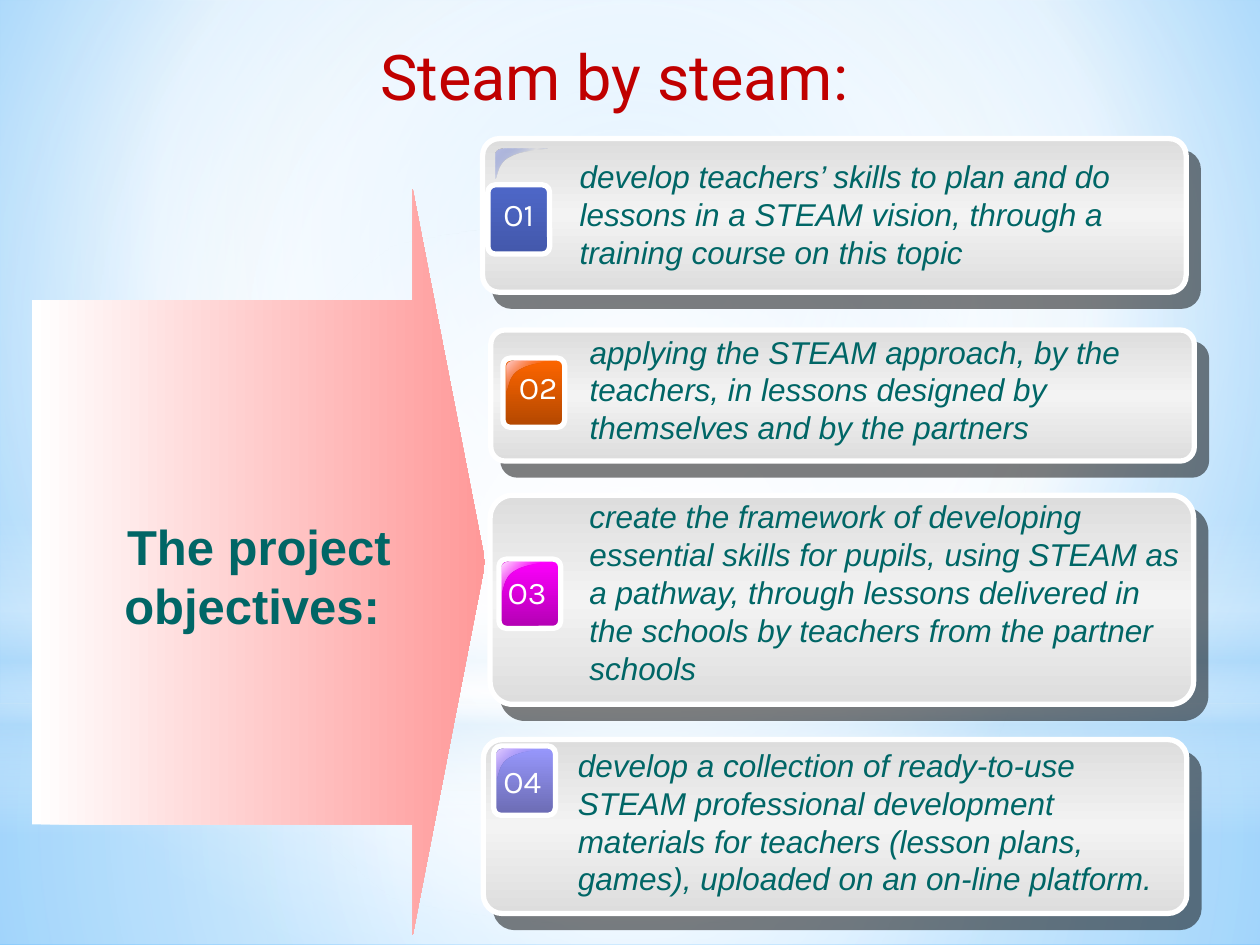
import lxml.etree
import pptx
import pptx.dml.color
import pptx.enum.shapes
import pptx.enum.text
import pptx.oxml.ns
import pptx.util

Pt = pptx.util.Pt
qn = pptx.oxml.ns.qn
SHAPES = pptx.enum.shapes.MSO_SHAPE
ALIGN = pptx.enum.text.PP_ALIGN

COLOURS = {
    "white": "FFFFFF", "haze": "B4DCFA", "sky": "9ED5FF", "deep sky": "5BB9FF",
    "text": "006666", "title": "C00000", "arrow": "FF9999", "shadow": "000000",
    "card edge": "DDDDDD", "card middle": "F3F3F3",
    "blue": "4E67C8", "dark blue": "4358AB", "pale blue": "BBC0E3",
    "orange": "FF6600", "dark orange": "B24700", "pale red": "FFD0D0",
    "magenta": "FF00FF", "dark magenta": "B200B2", "pale pink": "FFE5FF", "pink": "FFCCFF",
    "violet": "9999FF", "dark violet": "6B6BB2", "pale violet": "E5D0FF", "lilac": "CC99FF",
}
WIDTH, HEIGHT = 720, 540
CARD_WIDTH, TILE_SIZE, LABEL_SIZE = 402, (35.3, 39.6), (38.2, 28.8)
CENTRE = (50, 50, 50, 50)

# Background layers: shape, box, gradient stops (position, colour, opacity), direction
BACKDROP = [
    (SHAPES.RECTANGLE, (0, 402, WIDTH, 138),
     [(0, "white", 91), (37, "white", 76), (100, "haze", 79)], CENTRE),
    (SHAPES.RECTANGLE, (0, 0, WIDTH, 402),
     [(0, "white", 89), (48, "white", 62), (100, "haze", 79)], CENTRE),
    (SHAPES.RECTANGLE, (0, 296.6, WIDTH, 180),
     [(0, "white", 0), (29, "white", 30), (45, "haze", 40), (55, "white", 26),
      (65, "haze", 60), (100, "white", 0)], 90),
    (SHAPES.OVAL, (0, 126, WIDTH, 402), [(0, "white", 100), (56, "white", 0)], CENTRE),
]

OBJECTIVES = [
    {"label": "O1", "card": (275.8, 79.2, 87.8), "tile": (278.8, 105.6), "gloss": (283.4, 85),
     "label at": (280.6, 108), "text box": (331.2, 89.8, 347.8, 65.5),
     "tile colours": ("blue", "dark blue"), "gloss colours": ("pale blue", "blue"),
     "text": "develop teachers’ skills to plan and do lessons in a STEAM vision, "
             "through a training course on this topic"},
    {"label": "O2", "card": (280.5, 188.6, 74.9), "tile": (287.4, 204.6), "gloss": (289.4, 205.9),
     "label at": (289.4, 206.6), "text box": (337, 190, 342.7, 65.5),
     "tile colours": ("orange", "dark orange"), "gloss colours": ("pale red", "arrow"),
     "text": "applying the STEAM approach, by the teachers, in lessons designed by "
             "themselves and by the partners"},
    {"label": "O3", "card": (280.1, 283, 119.5), "tile": (285.1, 319.5), "gloss": (286.6, 321.1),
     "label at": (283, 324.2), "text box": (336.8, 284.2, 342.7, 108.7),
     "tile colours": ("magenta", "dark magenta"), "gloss colours": ("pale pink", "pink"),
     "text": "create the framework of developing essential skills for pupils, using STEAM "
             "as a pathway, through lessons delivered in the schools by teachers from the "
             "partner schools"},
    {"label": "O4", "card": (276.2, 422.6, 99.4), "tile": (282.1, 426.3), "gloss": (283.7, 427.7),
     "label at": (280.6, 432), "text box": (330.2, 426.3, 347.8, 87.1),
     "tile colours": ("violet", "dark violet"), "gloss colours": ("pale violet", "lilac"),
     "text": "develop a collection of ready-to-use STEAM professional development materials "
             "for teachers (lesson plans, games), uploaded on an on-line platform."},
]

# Corner highlight: one point makes a line, three make a cubic curve
GLOSS_START = (5.8, 0)
GLOSS_SEGMENTS = [
    [(2.2, 0), (0, 1.4), (0, 3.6)],
    [(0, 17.3)],
    [(1.4, 17.3), (0.7, 8.6), (7.9, 5)],
    [(15.1, 0.7), (29.5, 0.7), (29.2, 0)],
    [GLOSS_START],
]


def rgb(name):
    return pptx.dml.color.RGBColor.from_string(COLOURS[name])


def set_gradient(fill, element, stops, direction):
    """A number as direction is a linear angle, a tuple is the focus of a circle."""
    fill.gradient()
    gradient = element.find(".//" + qn("a:gradFill"))
    for child in list(gradient):
        gradient.remove(child)
    stop_list = lxml.etree.SubElement(gradient, qn("a:gsLst"))
    for position, name, opacity in stops:
        stop = lxml.etree.SubElement(stop_list, qn("a:gs"), pos=str(position * 1000))
        colour = lxml.etree.SubElement(stop, qn("a:srgbClr"), val=COLOURS[name])
        if opacity < 100:
            lxml.etree.SubElement(colour, qn("a:alpha"), val=str(opacity * 1000))
    if isinstance(direction, tuple):
        focus = lxml.etree.SubElement(gradient, qn("a:path"), path="circle")
        sides = {side: str(value * 1000) for side, value in zip("ltrb", direction)}
        lxml.etree.SubElement(focus, qn("a:fillToRect"), **sides)
    else:
        lxml.etree.SubElement(gradient, qn("a:lin"), ang=str(direction * 60000), scaled="0")


def style(shape, stops, direction, outlined=False):
    shape.shadow.inherit = False
    set_gradient(shape.fill, shape.element.spPr, stops, direction)
    if outlined:
        shape.line.color.rgb = rgb("white")
        shape.line.width = Pt(3)
    else:
        shape.line.fill.background()


def add_shape(slide, kind, box, stops, direction, adjustments=(), outlined=False):
    shape = slide.shapes.add_shape(kind, *map(Pt, box))
    for index, value in enumerate(adjustments):
        shape.adjustments[index] = value
    style(shape, stops, direction, outlined)
    return shape


def add_card_shadow(shape):
    effects = shape.element.spPr.find(qn("a:effectLst"))
    shadow = lxml.etree.SubElement(effects, qn("a:outerShdw"), blurRad="0", dist=str(Pt(10.6)),
                                   dir=str(49 * 60000), algn="ctr", rotWithShape="0")
    colour = lxml.etree.SubElement(shadow, qn("a:srgbClr"), val=COLOURS["shadow"])
    lxml.etree.SubElement(colour, qn("a:alpha"), val="50000")


def add_gloss(slide, left, top, edge, middle):
    start, *ends = [(Pt(left + x), Pt(top + y))
                    for x, y in [GLOSS_START] + [segment[-1] for segment in GLOSS_SEGMENTS]]
    builder = slide.shapes.build_freeform(*start)
    builder.add_line_segments(ends, close=True)
    shape = builder.convert_to_shape()
    # Turn the lines that have control points into curves
    lines = list(shape.element.iter(qn("a:lnTo")))
    for line, segment in zip(lines, GLOSS_SEGMENTS):
        if len(segment) == 3:
            curve = lxml.etree.Element(qn("a:cubicBezTo"))
            for x, y in segment:
                lxml.etree.SubElement(curve, qn("a:pt"), x=str(Pt(x)), y=str(Pt(y)))
            line.getparent().replace(line, curve)
    style(shape, [(0, edge, 100), (50, middle, 0), (100, edge, 100)], 45)


def add_text(slide, box, text, size, font, colour, align=ALIGN.LEFT, inset=True,
             bold=False, italic=False):
    frame = slide.shapes.add_textbox(*map(Pt, box)).text_frame
    frame.word_wrap = True
    frame.auto_size = pptx.enum.text.MSO_AUTO_SIZE.SHAPE_TO_FIT_TEXT
    if not inset:
        frame.margin_left = frame.margin_top = frame.margin_right = frame.margin_bottom = 0
    paragraph = frame.paragraphs[0]
    paragraph.alignment = align
    run = paragraph.add_run()
    run.text = text
    run.font.size, run.font.name = Pt(size), font
    run.font.bold, run.font.italic = bold, italic
    run.font.color.rgb = rgb(colour)


def main():
    presentation = pptx.Presentation()
    presentation.slide_width, presentation.slide_height = Pt(WIDTH), Pt(HEIGHT)
    slide = presentation.slides.add_slide(presentation.slide_layouts[6])

    # Background
    set_gradient(slide.background.fill, slide.element,
                 [(0, "sky", 100), (60, "white", 100), (100, "deep sky", 100)], (20, 10, 20, 60))
    for layer in BACKDROP:
        add_shape(slide, *layer)

    # Arrow and its heading
    add_shape(slide, SHAPES.RIGHT_ARROW, (18.4, 108.2, 258.9, 426.2),
              [(0, "white", 100), (100, "arrow", 100)], 0, (0.703, 0.16))
    add_text(slide, (36, 291.6, 223.9, 74.9), "The project objectives: ", 28, "Arial", "text",
             ALIGN.CENTER, bold=True)

    # Objective cards
    for objective in OBJECTIVES:
        left, top, height = objective["card"]
        card = add_shape(slide, SHAPES.ROUNDED_RECTANGLE, (left, top, CARD_WIDTH, height),
                         [(0, "card edge", 100), (50, "card middle", 100), (100, "card edge", 100)],
                         90, (0.109,), outlined=True)
        add_card_shadow(card)
        light, dark = objective["tile colours"]
        add_shape(slide, SHAPES.ROUNDED_RECTANGLE, objective["tile"] + TILE_SIZE,
                  [(0, light, 100), (100, dark, 100)], 90, (0.119,), outlined=True)
        add_gloss(slide, *objective["gloss"], *objective["gloss colours"])
        add_text(slide, objective["text box"], objective["text"], 18, "Arial", "text",
                 inset=False, italic=True)
        add_text(slide, objective["label at"] + LABEL_SIZE, objective["label"], 18, "Karla", "white")

    # Title
    add_text(slide, (61, 18, 580.3, 51.1), "Steam by steam:", 36, "Roboto", "title", ALIGN.CENTER)

    presentation.save("out.pptx")


if __name__ == "__main__":
    main()
